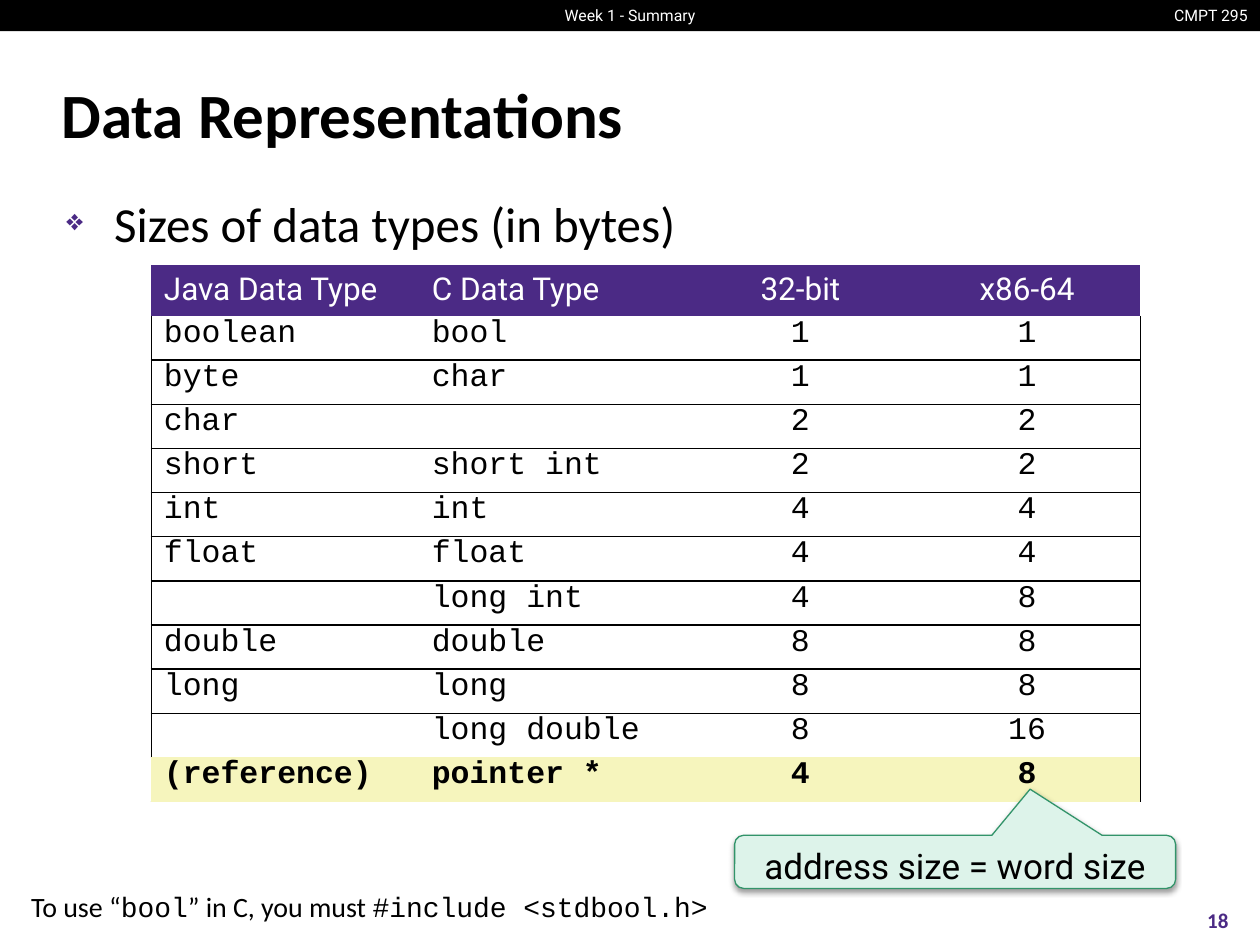
from lxml import etree
from pptx import Presentation
from pptx.dml.color import RGBColor
from pptx.enum.shapes import MSO_SHAPE
from pptx.enum.text import MSO_ANCHOR, PP_ALIGN
from pptx.oxml.ns import qn
from pptx.util import Cm, Pt

BLACK = RGBColor(0x00, 0x00, 0x00)
WHITE = RGBColor(0xFF, 0xFF, 0xFF)
PURPLE = RGBColor(0x4B, 0x2A, 0x85)
YELLOW = RGBColor(0xF6, 0xF5, 0xBD)
MINT = RGBColor(0xDD, 0xF3, 0xEA)
GREEN = RGBColor(0x32, 0x94, 0x6A)

LEFT, CENTER, RIGHT = PP_ALIGN.LEFT, PP_ALIGN.CENTER, PP_ALIGN.RIGHT
TOP, MIDDLE = MSO_ANCHOR.TOP, MSO_ANCHOR.MIDDLE
RECTANGLE = MSO_SHAPE.RECTANGLE
CALLOUT = MSO_SHAPE.ROUNDED_RECTANGULAR_CALLOUT

BODY_FONT, CODE_FONT, LABEL_FONT = "Calibri", "Courier New", "Roboto"

TABLE_LEFT, TABLE_TOP = 3.05, 5.34
COLUMN_WIDTHS = [5.4, 5.4, 4.57, 4.57]
HEADER_HEIGHT, ROW_HEIGHT = 1.03, 0.89
HEADINGS = ["Java Data Type", "C Data Type", "32-bit", "x86-64"]
TYPE_SIZES = [
    ["boolean", "bool", "1", "1"],
    ["byte", "char", "1", "1"],
    ["char", "", "2", "2"],
    ["short", "short int", "2", "2"],
    ["int", "int", "4", "4"],
    ["float", "float", "4", "4"],
    ["", "long int", "4", "8"],
    ["double", "double", "8", "8"],
    ["long", "long", "8", "8"],
    ["", "long double", "8", "16"],
    ["(reference)", "pointer *", "4", "8"],
]


def add_xml(parent, tag, **attributes):
    return etree.SubElement(parent, qn(tag), attributes)


def format_run(run, size, font, color, bold=False):
    run.font.size = Pt(size)
    run.font.name = font
    run.font.color.rgb = color
    run.font.bold = bold


def add_text(slide, box, text, size, font, color, align=LEFT, anchor=TOP,
             bold=False, wrap=True):
    frame = slide.shapes.add_textbox(*map(Cm, box)).text_frame
    frame.word_wrap = wrap
    frame.vertical_anchor = anchor
    paragraph = frame.paragraphs[0]
    paragraph.text = text
    paragraph.alignment = align
    for run in paragraph.runs:
        format_run(run, size, font, color, bold)
    return paragraph


def add_bullet(paragraph, symbol, color):
    properties = paragraph._p.get_or_add_pPr()
    properties.set("marL", str(Cm(0.96)))
    properties.set("indent", str(-Cm(0.96)))
    add_xml(add_xml(properties, "a:spcBef"), "a:spcPct", val="20000")
    add_xml(add_xml(properties, "a:buClr"), "a:srgbClr", val=str(color))
    add_xml(properties, "a:buSzPct", val="60000")
    add_xml(properties, "a:buChar", char=symbol)


def set_borders(cell, sides):
    """Draw a thin black line on the given sides and none on the others."""
    properties = cell._tc.get_or_add_tcPr()
    for position, side in enumerate("LRTB"):
        line = etree.Element(qn(f"a:ln{side}"), w=str(Pt(1)))
        if side in sides:
            add_xml(add_xml(line, "a:solidFill"), "a:srgbClr", val=str(BLACK))
        else:
            add_xml(line, "a:noFill")
        properties.insert(position, line)


def fill_row(table, row, texts, font, color, fill, bold=False, ruled=False):
    last = len(texts) - 1
    for column, text in enumerate(texts):
        cell = table.cell(row, column)
        cell.fill.solid()
        cell.fill.fore_color.rgb = fill
        if font == CODE_FONT:
            cell.margin_top = cell.margin_bottom = 0
        sides = ""
        if ruled:
            sides = "B" + "T" * (row > 1) + "L" * (column == 0) + "R" * (column == last)
        set_borders(cell, sides)
        paragraph = cell.text_frame.paragraphs[0]
        paragraph.text = text
        paragraph.alignment = CENTER if column >= 2 else LEFT
        paragraph.font.size = Pt(18)
        for run in paragraph.runs:
            format_run(run, 18, font, color, bold)


def add_grid(slide, top, row_heights):
    table = slide.shapes.add_table(
        len(row_heights), len(COLUMN_WIDTHS), Cm(TABLE_LEFT), Cm(top),
        Cm(sum(COLUMN_WIDTHS)), Cm(sum(row_heights))).table
    for column, width in zip(table.columns, COLUMN_WIDTHS):
        column.width = Cm(width)
    for row, height in zip(table.rows, row_heights):
        row.height = Cm(height)
    return table


def add_header_bar(slide):
    bar = slide.shapes.add_shape(RECTANGLE, 0, 0, Cm(25.4), Cm(0.63))
    bar.shadow.inherit = False
    bar.fill.solid()
    bar.fill.fore_color.rgb = BLACK
    bar.line.fill.background()
    add_text(slide, (23.34, 0, 2.06, 0.63), "CMPT 295", 9, LABEL_FONT, WHITE,
             RIGHT, MIDDLE, wrap=False)
    add_text(slide, (10.91, 0, 3.58, 0.63), "Week 1 - Summary", 9, LABEL_FONT,
             WHITE, CENTER, MIDDLE, wrap=False)


def add_footnote(slide):
    paragraph = add_text(slide, (0.38, 17.81, 14.35, 0.94), "To use “", 16,
                         BODY_FONT, BLACK, wrap=False)
    for text, font in [("bool", CODE_FONT), ("” in C, you must ", BODY_FONT),
                       ("#include <stdbool.h>", CODE_FONT)]:
        run = paragraph.add_run()
        run.text = text
        format_run(run, 16, font, BLACK)


def add_callout(slide, text):
    callout = slide.shapes.add_shape(CALLOUT, Cm(14.81), Cm(16.84), Cm(8.89), Cm(1.07))
    for index, value in enumerate([0.17, -1.37, 0.17]):
        callout.adjustments[index] = value
    callout.fill.solid()
    callout.fill.fore_color.rgb = MINT
    callout.line.color.rgb = GREEN
    callout.line.width = Pt(0.75)
    # Soft shadow straight below
    callout.shadow.inherit = False
    effects = callout._element.spPr.find(qn("a:effectLst"))
    shadow = add_xml(effects, "a:outerShdw", blurRad=str(Pt(3.1)),
                     dist=str(Pt(1.6)), dir="5400000", rotWithShape="0")
    add_xml(add_xml(shadow, "a:srgbClr", val=str(BLACK)), "a:alpha", val="38000")
    frame = callout.text_frame
    frame.word_wrap = True
    frame.vertical_anchor = TOP
    frame.text = text
    frame.paragraphs[0].alignment = CENTER
    format_run(frame.paragraphs[0].runs[0], 20, LABEL_FONT, BLACK)


def main():
    presentation = Presentation()
    presentation.slide_width, presentation.slide_height = Cm(25.4), Cm(19.05)
    slide = presentation.slides.add_slide(presentation.slide_layouts[6])

    # Header, title and topic
    add_header_bar(slide)
    add_text(slide, (0.99, 1.22, 23.34, 2.11), "Data Representations", 36,
             BODY_FONT, BLACK, anchor=MIDDLE, bold=True)
    topic = add_text(slide, (1.09, 3.78, 23.24, 13.82),
                     "Sizes of data types (in bytes)", 28, BODY_FONT, BLACK)
    add_bullet(topic, "❖", PURPLE)

    # Slide number and footnote
    add_text(slide, (23.7, 18.03, 1.7, 1.02), "18", 12, BODY_FONT, PURPLE,
             CENTER, MIDDLE, bold=True)
    add_footnote(slide)

    # Table of sizes
    row_heights = [HEADER_HEIGHT] + [ROW_HEIGHT] * len(TYPE_SIZES)
    sizes = add_grid(slide, TABLE_TOP, row_heights)
    fill_row(sizes, 0, HEADINGS, LABEL_FONT, WHITE, PURPLE)
    for row, texts in enumerate(TYPE_SIZES, start=1):
        fill_row(sizes, row, texts, CODE_FONT, BLACK, WHITE, ruled=True)

    # Highlighted pointer row over the last row
    highlight = add_grid(slide, TABLE_TOP + sum(row_heights[:-1]), [ROW_HEIGHT])
    fill_row(highlight, 0, TYPE_SIZES[-1], CODE_FONT, BLACK, YELLOW, bold=True)
    add_callout(slide, "address size = word size")

    presentation.save("out.pptx")


if __name__ == "__main__":
    main()
